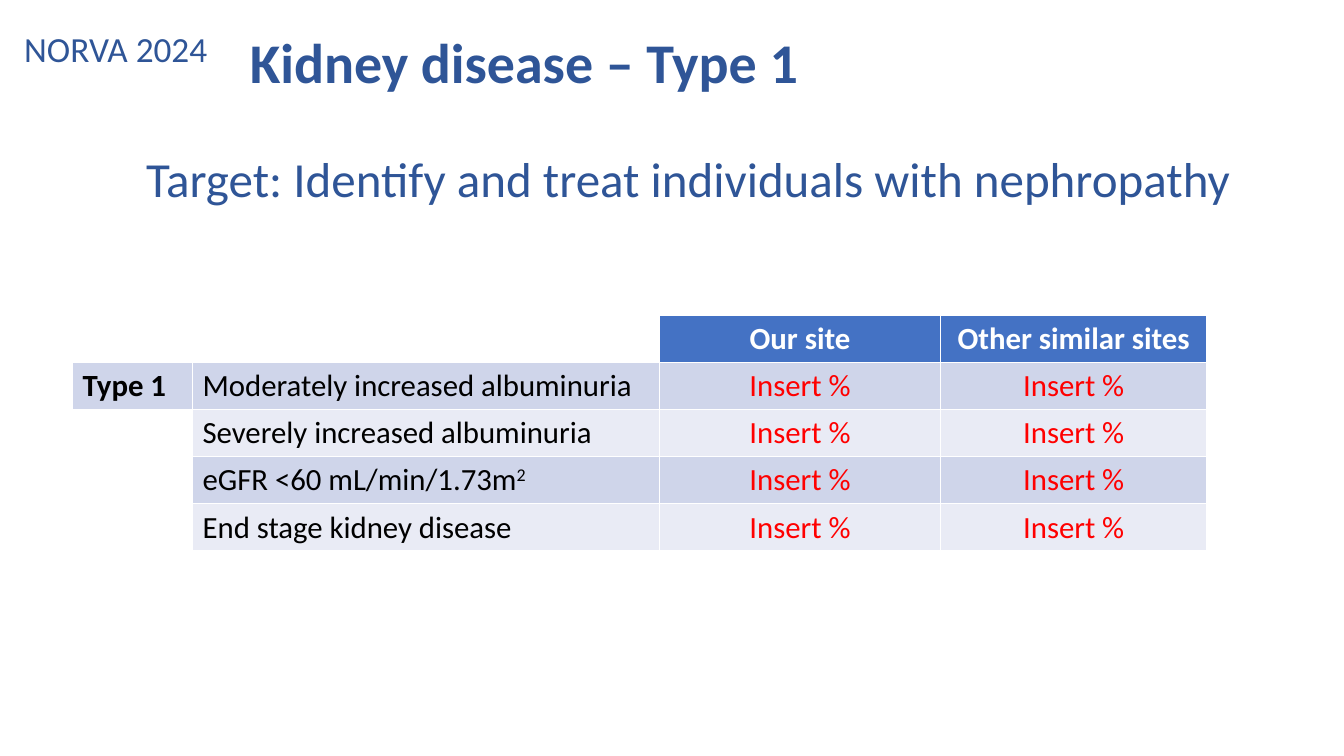
"""Build the kidney disease slide for type 1 diabetes."""
from pptx import Presentation
from pptx.dml.color import RGBColor as Rgb
from pptx.enum.text import MSO_ANCHOR as Anchor, PP_ALIGN as Align
from pptx.util import Inches, Pt

TAG = "NORVA 2024"
HEAD = "Kidney disease – Type 1"
TARGET = "Target: Identify and treat individuals with nephropathy"
SITES = ["Our site", "Other similar sites"]
GROUP = "Type 1"
ENTRY = "Insert %"
ITEMS = [
    ("Moderately increased albuminuria", ""),
    ("Severely increased albuminuria", ""),
    ("eGFR <60 mL/min/1.73m", "2"),
    ("End stage kidney disease", ""),
]
COLS = [1.19, 4.63, 2.79, 2.64]
ROW = 0.466

THEME = {
    "font": "Calibri",
    "blue": "2F5597",
    "head": "4472C4",
    "bands": ["CFD5EA", "E9EBF5"],
    "white": "FFFFFF",
    "black": "000000",
    "red": "FF0000",
    "tag": 25.2,
    "title": 40,
    "target": 35,
    "cell": 22,
}


def add_run(para, text, size, color, bold=False):
    run = para.add_run()
    run.text = text
    form = {"name": THEME["font"], "size": Pt(size), "bold": bold}
    for key, value in form.items():
        setattr(run.font, key, value)
    run.font.color.rgb = Rgb.from_string(THEME[color])
    return run


def put_text(shape, box, text, size, anchor, space, bold=False):
    for key, value in zip(("left", "top", "width", "height"), box):
        setattr(shape, key, Inches(value))
    frame = shape.text_frame
    frame.word_wrap = True
    frame.vertical_anchor = anchor
    para = frame.paragraphs[0]
    para.alignment = Align.LEFT
    para.line_spacing = space
    add_run(para, text, THEME[size], "blue", bold)


def put_cell(cell, fill, text="", color="black", bold=False, align=Align.LEFT, power=""):
    cell.fill.solid()
    cell.fill.fore_color.rgb = Rgb.from_string(fill)
    para = cell.text_frame.paragraphs[0]
    para.alignment = align
    if text:
        add_run(para, text, THEME["cell"], color, bold)
    if power:
        run = add_run(para, power, THEME["cell"], color, bold)
        run.font._element.set("baseline", "30000")


def add_grid(slide):
    count = len(ITEMS) + 1
    frame = slide.shapes.add_table(
        count, len(COLS), Inches(0.72), Inches(3.13),
        Inches(sum(COLS)), Inches(ROW * count))
    grid = frame.table
    for col, width in zip(grid.columns, COLS):
        col.width = Inches(width)
    for col in range(2):
        put_cell(grid.cell(0, col), THEME["white"])
    for col, site in enumerate(SITES, 2):
        put_cell(grid.cell(0, col), THEME["head"], site, "white", True, Align.CENTER)
    for row, (item, power) in enumerate(ITEMS, 1):
        band = THEME["bands"][(row - 1) % 2]
        first = row == 1
        put_cell(grid.cell(row, 0), band if first else THEME["white"],
                 GROUP if first else "", bold=True)
        put_cell(grid.cell(row, 1), band, item, power=power)
        for col in range(2, len(COLS)):
            put_cell(grid.cell(row, col), band, ENTRY, "red", align=Align.CENTER)


def main():
    deck = Presentation()
    deck.slide_width, deck.slide_height = Inches(13.33), Inches(7.5)
    slide = deck.slides.add_slide(deck.slide_layouts[5])
    shapes = slide.shapes
    put_text(shapes.title, (0.14, 0.27, 2.25, 0.47), TAG, "tag", Anchor.MIDDLE, 0.9)
    boxes = [
        ((1.35, 1.49, 12.42, 0.64), TARGET, "target", Anchor.TOP, 0.9),
        ((2.38, 0.22, 5.86, 0.77), HEAD, "title", Anchor.TOP, 1.0, True),
    ]
    for box, *rest in boxes:
        put_text(shapes.add_textbox(0, 0, 0, 0), box, *rest)
    add_grid(slide)
    deck.save("out.pptx")


if __name__ == "__main__":
    main()
